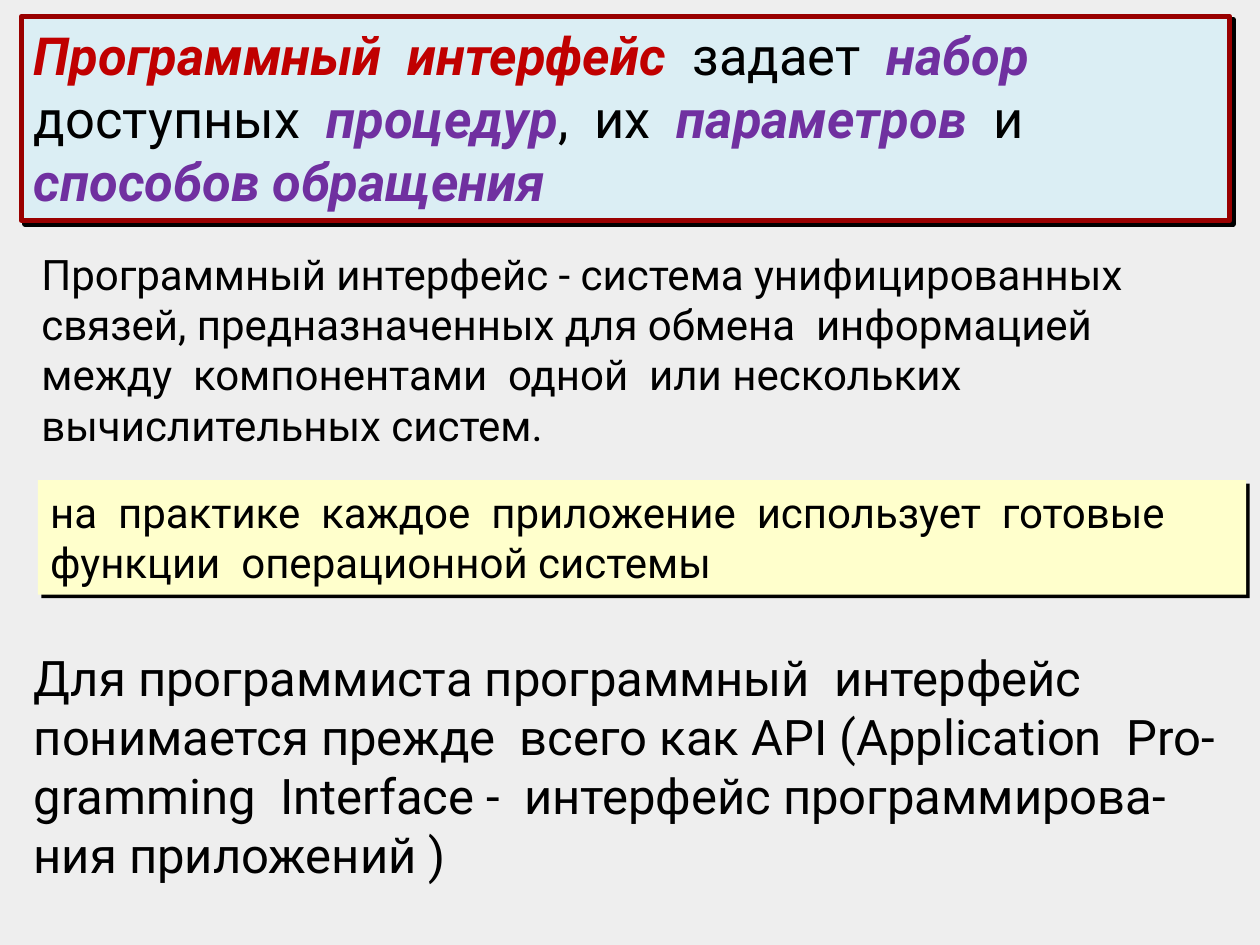
from dataclasses import dataclass

from lxml import etree
from pptx import Presentation
from pptx.dml.color import RGBColor
from pptx.enum import shapes, text
from pptx.oxml import ns
from pptx.util import Inches, Pt


@dataclass(frozen=True)
class Theme:
    font: str = "Roboto"
    back: str = "EEEEEE"
    ink: str = "000000"
    term: str = "C00000"
    key: str = "7030A0"
    edge: str = "990000"
    sky: str = "DBEEF4"
    cream: str = "FFFFCC"
    head: int = 30
    body: int = 24
    note: int = 28


THEME = Theme()
PLAIN = {"bold": False, "italic": False}
STRONG = {"bold": True, "italic": True}


def paint(fill, color):
    fill.solid()
    fill.fore_color.rgb = RGBColor.from_string(color)


def cast(shape):
    """Add a hard shadow to the lower right."""
    shape.shadow.inherit = False
    effects = shape._element.spPr.find(ns.qn("a:effectLst"))
    shade = etree.SubElement(effects, ns.qn("a:outerShdw"), blurRad="0",
                             dist=str(Pt(2.8)), dir="2700000", algn="ctr",
                             rotWithShape="0")
    etree.SubElement(shade, ns.qn("a:srgbClr"), val=THEME.ink)


def write(shape, parts, size):
    """Fill a shape with (words, color, style) parts in one paragraph."""
    frame = shape.text_frame
    form = {"word_wrap": True, "vertical_anchor": text.MSO_ANCHOR.TOP,
            "auto_size": text.MSO_AUTO_SIZE.SHAPE_TO_FIT_TEXT}
    for name, value in form.items():
        setattr(frame, name, value)
    line = frame.paragraphs[0]
    line.alignment = text.PP_ALIGN.LEFT
    for words, color, style in parts:
        run = line.add_run()
        run.text = words
        look = {"name": THEME.font, "size": Pt(size), **style}
        for name, value in look.items():
            setattr(run.font, name, value)
        run.font.color.rgb = RGBColor.from_string(color)


def panel(slide, box, parts, size, fill, edge=None):
    shape = slide.shapes.add_shape(shapes.MSO_SHAPE.RECTANGLE,
                                   *map(Inches, box))
    paint(shape.fill, fill)
    if edge:
        paint(shape.line.fill, edge)
        shape.line.width = Pt(3)
    else:
        shape.line.fill.background()
    cast(shape)
    write(shape, parts, size)


def prose(slide, box, words, size):
    shape = slide.shapes.add_textbox(*map(Inches, box))
    write(shape, [(words, THEME.ink, PLAIN)], size)


def lead(slide, box):
    ink, key = (THEME.ink, PLAIN), (THEME.key, STRONG)
    parts = [
        ("Программный  интерфейс  ", THEME.term, STRONG),
        ("задает  ", *ink),
        ("набор", *key),
        ("  доступных  ", *ink),
        ("процедур", *key),
        (",  их  ", *ink),
        ("параметров", *key),
        ("  и ", *ink),
        ("способов обращения", *key),
    ]
    panel(slide, box, parts, THEME.head, THEME.sky, THEME.edge)


def main():
    deck = Presentation()
    deck.slide_width, deck.slide_height = Inches(10), Inches(7.5)
    slide = deck.slides.add_slide(deck.slide_layouts[6])
    paint(slide.background.fill, THEME.back)

    lead(slide, (0.17, 0.13, 9.59, 1.62))
    prose(slide, (0.23, 1.92, 9.59, 1.72),
          "Программный интерфейс - система унифицированных связей, "
          "предназначенных для обмена  информацией  между  компонентами  "
          "одной  или нескольких  вычислительных систем.", THEME.body)
    use = ("на  практике  каждое  приложение  использует  готовые  "
           "функции  операционной системы")
    panel(slide, (0.3, 3.81, 9.59, 0.91), [(use, THEME.ink, PLAIN)],
          THEME.body, THEME.cream)
    prose(slide, (0.17, 5.09, 9.66, 1.99),
          "Для программиста программный  интерфейс понимается прежде  "
          "всего как API (Application  Pro-gramming  Interface -  "
          "интерфейс программирова-ния приложений )", THEME.note)
    deck.save("out.pptx")


if __name__ == "__main__":
    main()
